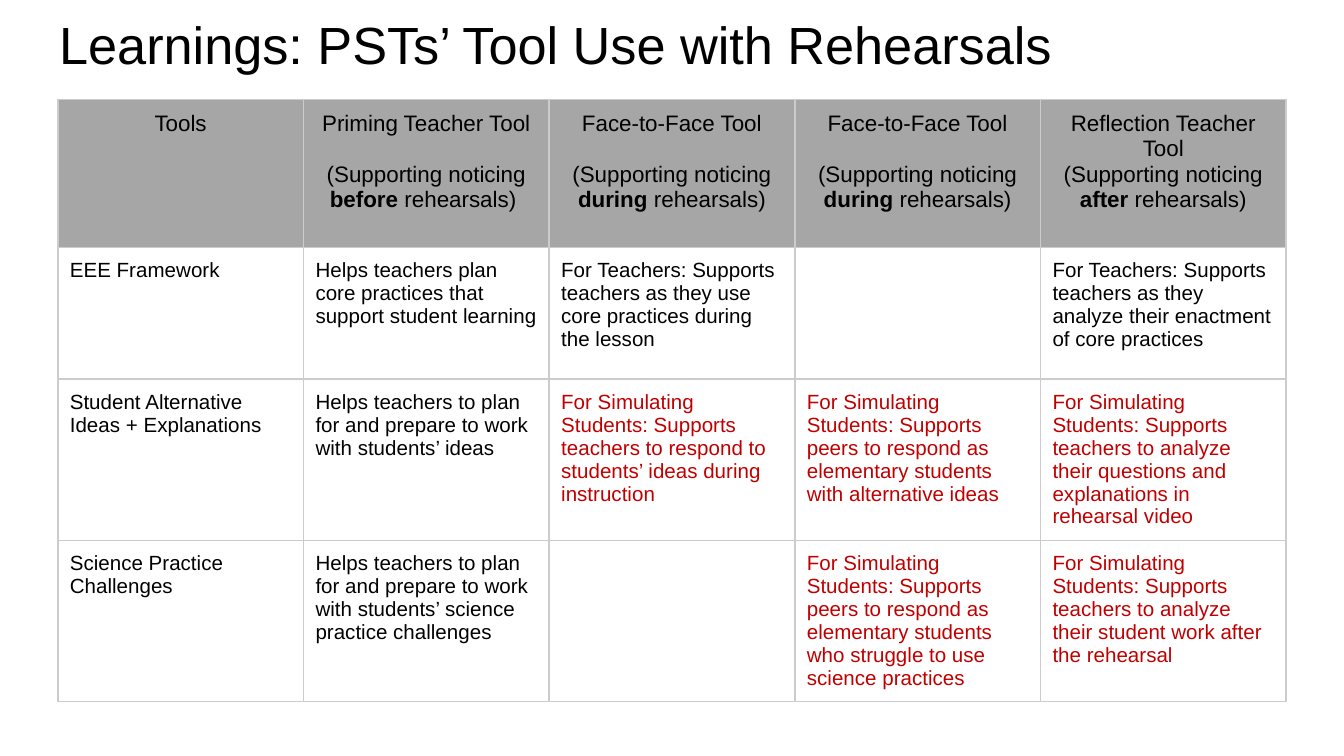
from lxml import etree
from pptx import Presentation
from pptx.dml.color import RGBColor
from pptx.enum.text import MSO_ANCHOR, MSO_AUTO_SIZE, PP_ALIGN
from pptx.oxml.ns import qn
from pptx.util import Inches, Pt

TOP = MSO_ANCHOR.TOP
FIXED = MSO_AUTO_SIZE.NONE
LEFT, CENTER = PP_ALIGN.LEFT, PP_ALIGN.CENTER

THEME = {
    "font": "Arial",
    "ink": "000000",
    "accent": "C00000",
    "head": "A6A6A6",
    "rule": "CCCCCC",
    "title": 28,
    "header": 12,
    "body": 11,
}

HEADS = [
    ("Tools", None, ""),
    ("Priming Teacher Tool", "before", " rehearsals) "),
    ("Face-to-Face Tool", "during", " rehearsals)"),
    ("Face-to-Face Tool", "during", " rehearsals)"),
    ("Reflection Teacher Tool", "after", " rehearsals)"),
]
ROWS = [
    ["EEE Framework",
     "Helps teachers plan core practices that support student learning ",
     "For Teachers: Supports teachers as they use core practices during the lesson",
     "",
     "For Teachers: Supports teachers as they analyze their enactment of core practices"],
    ["Student Alternative Ideas + Explanations",
     "Helps teachers to plan for and prepare to work with students’ ideas",
     "For Simulating Students: Supports teachers to respond to students’ ideas during instruction",
     "For Simulating Students: Supports peers to respond as elementary students with alternative ideas",
     "For Simulating Students: Supports teachers to analyze their questions and explanations in rehearsal video"],
    ["Science Practice Challenges",
     "Helps teachers to plan for and prepare to work with students’ science practice challenges",
     "",
     "For Simulating Students: Supports peers to respond as elementary students who struggle to use science practices",
     "For Simulating Students: Supports teachers to analyze their student work after the rehearsal"],
]
HEIGHTS = [1.1, 0.98, 1.17, 1.17]


def write(para, text, size, color="ink", bold=False, align=LEFT):
    """Add one formatted run to a paragraph."""
    para.alignment = align
    run = para.add_run()
    run.text = text
    style = {"name": THEME["font"], "size": Pt(THEME[size]), "bold": bold}
    for key, value in style.items():
        setattr(run.font, key, value)
    run.font.color.rgb = RGBColor.from_string(THEME[color])


def edge(cell):
    """Draw a thin rule on all four sides of a cell."""
    props = cell._tc.get_or_add_tcPr()
    for side in ("lnL", "lnR", "lnT", "lnB"):
        line = etree.SubElement(props, qn(f"a:{side}"), w=str(Pt(1)))
        fill = etree.SubElement(line, qn("a:solidFill"))
        etree.SubElement(fill, qn("a:srgbClr"), val=THEME["rule"])


prs = Presentation()
prs.slide_width = Inches(10)
prs.slide_height = Inches(10) * 9 // 16
slide = prs.slides.add_slide(prs.slide_layouts[5])

# Title
title = slide.shapes.title
place = {"left": 0.34, "top": -0.01, "width": 9.32, "height": 0.63}
for key, value in place.items():
    setattr(title, key, Inches(value))
frame = title.text_frame
layout = {
    "margin_left": Inches(0.1),
    "margin_right": Inches(0.1),
    "margin_top": Inches(0.1),
    "margin_bottom": Inches(0.1),
    "vertical_anchor": TOP,
    "auto_size": FIXED,
    "word_wrap": True,
}
for key, value in layout.items():
    setattr(frame, key, value)
write(frame.paragraphs[0], "Learnings: PSTs’ Tool Use with Rehearsals", "title")

# Table grid
table = slide.shapes.add_table(
    len(HEIGHTS), len(HEADS), Inches(0.43), Inches(0.74),
    Inches(9.14), Inches(sum(HEIGHTS))).table
table.first_row = table.horz_banding = False
for row, height in zip(table.rows, HEIGHTS):
    row.height = Inches(height)
for cell in table.iter_cells():
    for side in ("left", "right", "top", "bottom"):
        setattr(cell, f"margin_{side}", Inches(0.09))
    edge(cell)
    cell.fill.background()

# Header row
for col, (tool, when, tail) in enumerate(HEADS):
    cell = table.cell(0, col)
    cell.fill.solid()
    cell.fill.fore_color.rgb = RGBColor.from_string(THEME["head"])
    write(cell.text_frame.paragraphs[0], tool, "header", align=CENTER)
    if when:
        para = cell.text_frame.add_paragraph()
        # The last heading wraps to two lines, so it needs no gap
        para.space_before = Pt(0 if when == "after" else 13.5)
        for text in ("(Supporting noticing ", when, tail):
            write(para, text, "header", bold=text == when, align=CENTER)

# Body rows
for num, texts in enumerate(ROWS, 1):
    for col, text in enumerate(texts):
        if text:
            color = "accent" if text.startswith("For Simulating") else "ink"
            para = table.cell(num, col).text_frame.paragraphs[0]
            write(para, text, "body", color)

prs.save("out.pptx")
